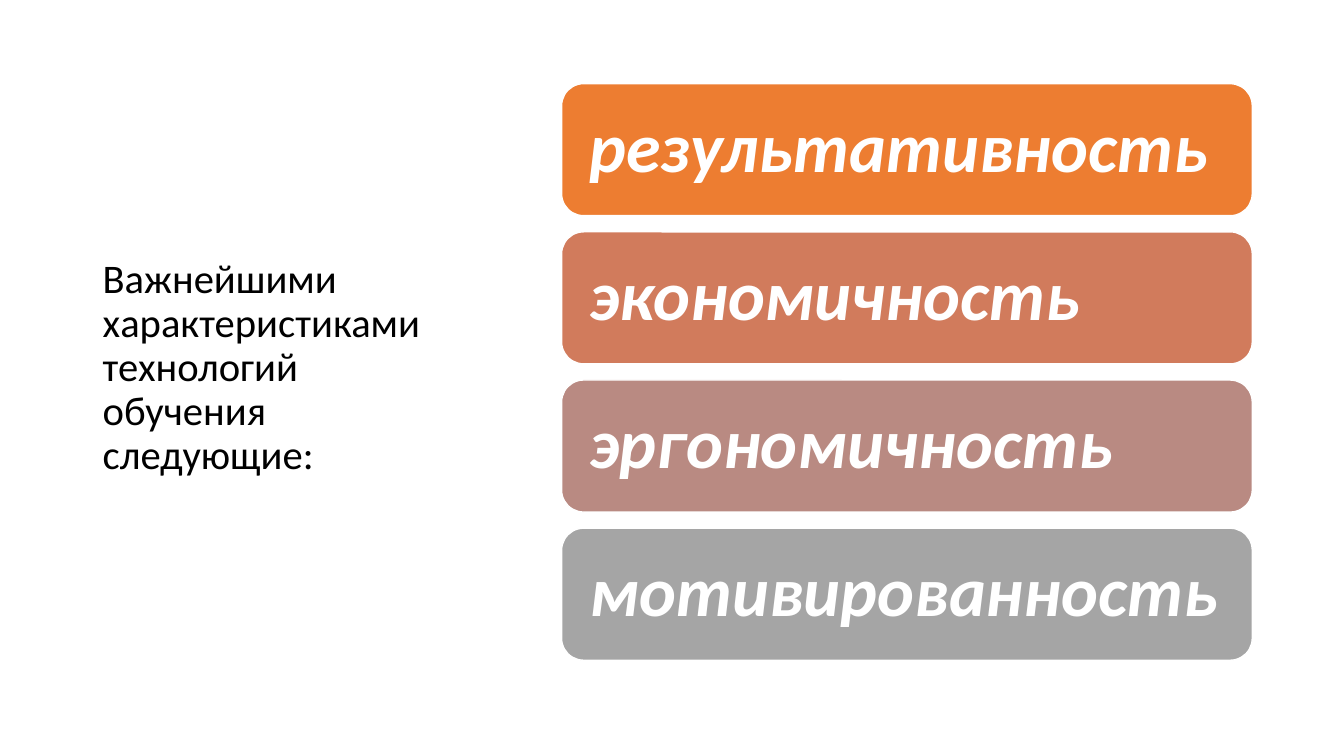
from dataclasses import dataclass

from pptx import Presentation
from pptx.dml.color import RGBColor
from pptx.enum import shapes, text
from pptx.util import Inches, Pt


@dataclass(frozen=True)
class Theme:
    font: str = "Calibri"
    ink: str = "000000"
    paper: str = "FFFFFF"
    heading_size: int = 29
    bar_size: int = 50
    line_spacing: float = 0.9


THEME = Theme()
HEADING = "Важнейшими характеристиками технологий обучения следующие:"
CHARACTERISTICS = [
    ("результативность", "ED7D31"),
    ("экономичность", "D17B5C"),
    ("эргономичность", "B98A82"),
    ("мотивированность", "A5A5A5"),
]
BAR_LEFT, BAR_TOP, BAR_WIDTH, BAR_HEIGHT = 5.57, 0.83, 6.85, 1.31
BAR_STEP = 1.47
BAR_INSET = 0.21


def write(frame, wording, size, colour, emphasis=False):
    """Fill a frame with one left-aligned, vertically centred paragraph."""
    frame.word_wrap = True
    frame.vertical_anchor = text.MSO_ANCHOR.MIDDLE
    frame.text = wording
    paragraph = frame.paragraphs[0]
    paragraph.alignment = text.PP_ALIGN.LEFT
    paragraph.line_spacing = THEME.line_spacing
    font = paragraph.runs[0].font
    font.name = THEME.font
    font.size = Pt(size)
    font.bold = font.italic = emphasis
    font.color.rgb = RGBColor.from_string(colour)


def add_heading(slide):
    heading = slide.shapes.add_textbox(
        Inches(0.92), Inches(0.61), Inches(3.69), Inches(6.09))
    write(heading.text_frame, HEADING, THEME.heading_size, THEME.ink)


def add_bar(slide, top, wording, colour):
    bar = slide.shapes.add_shape(
        shapes.MSO_SHAPE.ROUNDED_RECTANGLE,
        Inches(BAR_LEFT), Inches(top), Inches(BAR_WIDTH), Inches(BAR_HEIGHT))
    bar.shadow.inherit = False
    bar.fill.solid()
    bar.fill.fore_color.rgb = RGBColor.from_string(colour)
    bar.line.color.rgb = RGBColor.from_string(THEME.paper)
    bar.line.width = Pt(1)
    frame = bar.text_frame
    frame.margin_left = frame.margin_right = Inches(BAR_INSET)
    frame.margin_top = frame.margin_bottom = Inches(BAR_INSET)
    write(frame, wording, THEME.bar_size, THEME.paper, emphasis=True)


def main():
    deck = Presentation()
    deck.slide_width, deck.slide_height = Inches(13.33), Inches(7.5)
    slide = deck.slides.add_slide(deck.slide_layouts[6])
    add_heading(slide)
    for row, (wording, colour) in enumerate(CHARACTERISTICS):
        add_bar(slide, BAR_TOP + row * BAR_STEP, wording, colour)
    deck.save("out.pptx")


if __name__ == "__main__":
    main()
